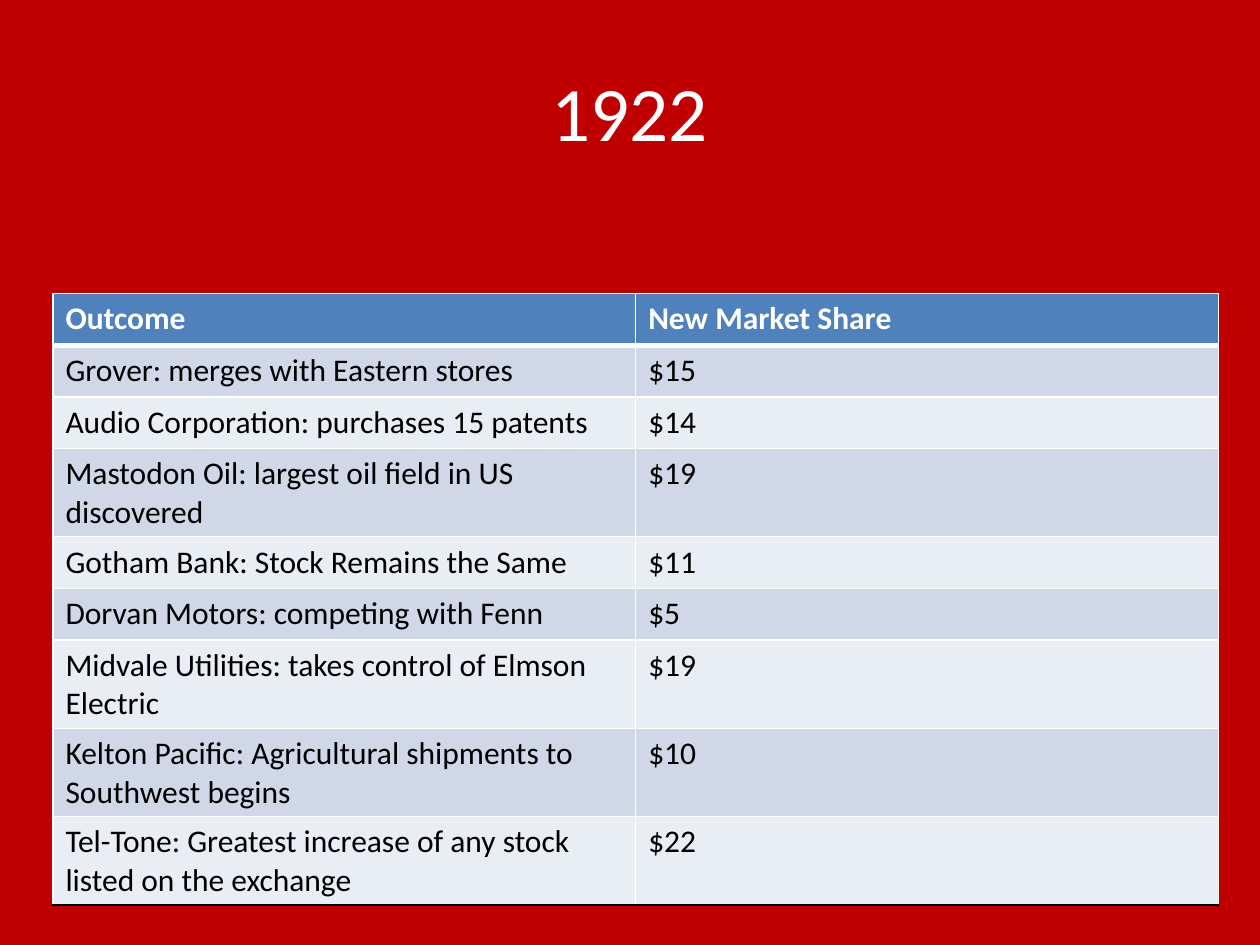
from dataclasses import dataclass

from lxml import etree
from pptx import Presentation
from pptx.dml.color import RGBColor
from pptx.enum.text import MSO_ANCHOR, PP_ALIGN
from pptx.oxml.ns import qn
from pptx.util import Inches, Pt

CENTER = PP_ALIGN.CENTER
MIDDLE = MSO_ANCHOR.MIDDLE


@dataclass(frozen=True)
class Theme:
    font: str = "Calibri"
    title_size: int = 44
    body_size: int = 18
    background: str = "C00000"
    light: str = "FFFFFF"
    dark: str = "000000"
    header: str = "4F81BD"
    bands: tuple = ("D0D8E8", "E9EDF4")
    thin: int = 1
    thick: int = 3


THEME = Theme()
TITLE = "1922"
ROWS = [
    ("Outcome", "New Market Share"),
    ("Grover: merges with Eastern stores", "$15"),
    ("Audio Corporation: purchases 15 patents", "$14"),
    ("Mastodon Oil: largest oil field in US discovered", "$19"),
    ("Gotham Bank: Stock Remains the Same", "$11"),
    ("Dorvan Motors: competing with Fenn", "$5"),
    ("Midvale Utilities: takes control of Elmson Electric", "$19"),
    ("Kelton Pacific: Agricultural shipments to Southwest begins", "$10"),
    ("Tel-Tone: Greatest increase of any stock listed on the exchange", "$22"),
]


def style_text(paragraph, size, color, bold=False):
    font = paragraph.font
    font.name = THEME.font
    font.size = Pt(size)
    font.bold = bold
    font.color.rgb = RGBColor.from_string(color)


def add_border(cell, side, color, width):
    properties = cell._tc.get_or_add_tcPr()
    line = etree.SubElement(properties, qn(f"a:ln{side}"), w=str(Pt(width)))
    fill = etree.SubElement(line, qn("a:solidFill"))
    etree.SubElement(fill, qn("a:srgbClr"), val=color)


def add_title(slide, left, top, width, height):
    box = slide.shapes.add_textbox(left, top, width, height)
    frame = box.text_frame
    frame.word_wrap = True
    frame.vertical_anchor = MIDDLE
    frame.text = TITLE
    paragraph = frame.paragraphs[0]
    paragraph.alignment = CENTER
    style_text(paragraph, THEME.title_size, THEME.light)


def fill_cell(cell, text, row_index):
    is_header = row_index == 0
    is_last = row_index == len(ROWS) - 1
    cell.text = text
    text_color = THEME.light if is_header else THEME.dark
    style_text(cell.text_frame.paragraphs[0], THEME.body_size, text_color, is_header)

    top_width = THEME.thick if row_index == 1 else THEME.thin
    bottom_width = THEME.thick if is_header else THEME.thin
    bottom_color = THEME.dark if is_last else THEME.light
    add_border(cell, "L", THEME.light, THEME.thin)
    add_border(cell, "R", THEME.light, THEME.thin)
    add_border(cell, "T", THEME.light, top_width)
    add_border(cell, "B", bottom_color, bottom_width)

    band = THEME.bands[(row_index - 1) % len(THEME.bands)]
    cell.fill.solid()
    cell.fill.fore_color.rgb = RGBColor.from_string(THEME.header if is_header else band)


def add_outcome_table(slide, left, top, width, row_height):
    table = slide.shapes.add_table(
        len(ROWS), len(ROWS[0]), left, top, width, row_height * len(ROWS)
    ).table
    for row_index, texts in enumerate(ROWS):
        for column_index, text in enumerate(texts):
            fill_cell(table.cell(row_index, column_index), text, row_index)


def main():
    presentation = Presentation()
    presentation.slide_width = Inches(10)
    presentation.slide_height = Inches(7.5)
    slide = presentation.slides.add_slide(presentation.slide_layouts[6])
    background = slide.background.fill
    background.solid()
    background.fore_color.rgb = RGBColor.from_string(THEME.background)
    add_title(slide, Inches(0.5), Inches(0.25), Inches(9), Inches(1.25))
    add_outcome_table(slide, Inches(0.42), Inches(2.33), Inches(9.25), Inches(0.41))
    presentation.save("out.pptx")


if __name__ == "__main__":
    main()
